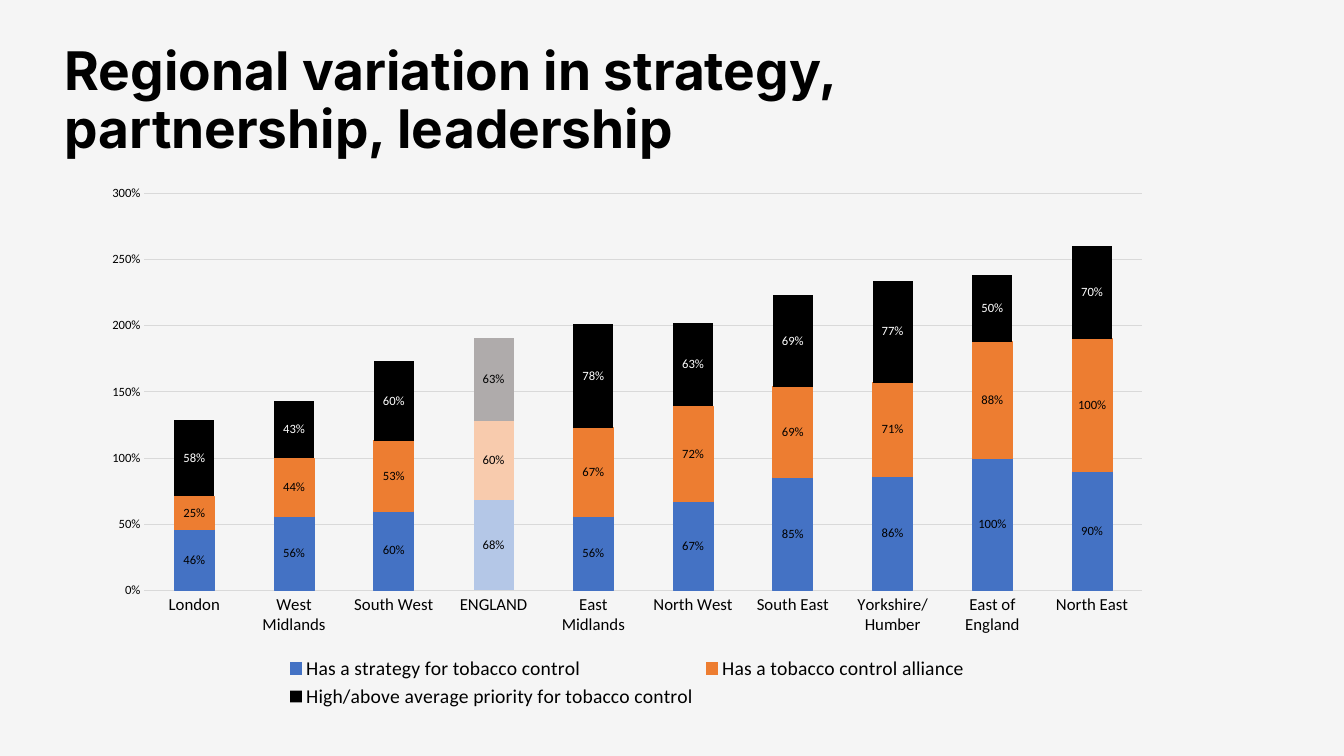
from pptx import Presentation
from pptx.chart.data import CategoryChartData
from pptx.dml.color import RGBColor
from pptx.enum.chart import XL_CHART_TYPE, XL_LABEL_POSITION, XL_LEGEND_POSITION, XL_TICK_MARK
from pptx.enum.text import MSO_ANCHOR, MSO_AUTO_SIZE, PP_ALIGN
from pptx.util import Cm, Pt

STACKED = XL_CHART_TYPE.COLUMN_STACKED
CENTER = XL_LABEL_POSITION.CENTER
BOTTOM = XL_LEGEND_POSITION.BOTTOM
NO_TICK = XL_TICK_MARK.NONE

BLACK = RGBColor(0x00, 0x00, 0x00)
WHITE = RGBColor(0xFF, 0xFF, 0xFF)
PAPER = RGBColor(0xF5, 0xF5, 0xF5)
GRID = RGBColor(0xD9, 0xD9, 0xD9)
BLUE = RGBColor(0x44, 0x72, 0xC4)
PALE_BLUE = RGBColor(0xB4, 0xC7, 0xE7)
ORANGE = RGBColor(0xED, 0x7D, 0x31)
PALE_ORANGE = RGBColor(0xF8, 0xCB, 0xAD)
GREY = RGBColor(0xAF, 0xAB, 0xAB)

TITLE = "Regional variation in strategy, partnership, leadership"
NATIONAL = "ENGLAND"
REGIONS = ["London", "West Midlands", "South West", NATIONAL, "East Midlands",
           "North West", "South East", "Yorkshire/Humber", "East of England", "North East"]
# name, values, bar colour, national bar colour, outline colour, label colour
MEASURES = [
    ("Has a strategy for tobacco control",
     [0.46, 0.56, 0.6, 0.68, 0.56, 0.67, 0.85, 0.86, 1, 0.9],
     BLUE, PALE_BLUE, BLUE, BLACK),
    ("Has a tobacco control alliance",
     [0.25, 0.44, 0.53, 0.6, 0.67, 0.72, 0.69, 0.71, 0.88, 1],
     ORANGE, PALE_ORANGE, ORANGE, BLACK),
    ("High/above average priority for tobacco control",
     [0.58, 0.43, 0.6, 0.63, 0.78, 0.63, 0.69, 0.77, 0.5, 0.7],
     BLACK, GREY, None, WHITE),
]
PERCENT = "0%"


def set_font(font, size, color=BLACK, name="Calibri", bold=False):
    font.name, font.size, font.bold = name, Pt(size), bold
    font.color.rgb = color


def set_line(line, color):
    if color is None:
        line.fill.background()
    else:
        line.color.rgb = color
        line.width = Pt(0.75)


def add_title(page):
    title = page.shapes.title
    title.left, title.top, title.width, title.height = Cm(1.37), Cm(0.74), Cm(22.15), Cm(3.68)
    frame = title.text_frame
    frame.text = TITLE
    frame.word_wrap = True
    frame.auto_size = MSO_AUTO_SIZE.NONE
    frame.vertical_anchor = MSO_ANCHOR.MIDDLE
    para = frame.paragraphs[0]
    para.alignment = PP_ALIGN.LEFT
    para.line_spacing = 0.9
    set_font(para.font, 38, name="Inter", bold=True)


def style_axes(chart):
    regions, shares = chart.category_axis, chart.value_axis
    for axis, size, color in ((regions, 12, GRID), (shares, 9, None)):
        axis.major_tick_mark = axis.minor_tick_mark = NO_TICK
        set_font(axis.tick_labels.font, size)
        set_line(axis.format.line, color)
    shares.minimum_scale, shares.maximum_scale, shares.major_unit = 0, 3, 0.5
    shares.tick_labels.number_format = PERCENT
    shares.tick_labels.number_format_is_linked = False
    set_line(shares.major_gridlines.format.line, GRID)


def style_series(series, color, national_color, outline, label_color):
    series.format.fill.solid()
    series.format.fill.fore_color.rgb = color
    set_line(series.format.line, outline)

    labels = series.data_labels
    labels.show_value = True
    labels.number_format, labels.number_format_is_linked = PERCENT, False
    labels.position = CENTER
    set_font(labels.font, 9, label_color)

    national = series.points[REGIONS.index(NATIONAL)]
    national.format.fill.solid()
    national.format.fill.fore_color.rgb = national_color
    set_line(national.format.line, None)
    if label_color != BLACK:
        set_font(national.data_label.font, 9)
        national.data_label.position = CENTER


def add_region_chart(page):
    data = CategoryChartData(number_format=PERCENT)
    data.categories = REGIONS
    for name, values, *_ in MEASURES:
        data.add_series(name, values)
    chart = page.shapes.add_chart(STACKED, Cm(2.29), Cm(4.42), Cm(27.03), Cm(13.54), data).chart
    chart.has_title = False
    set_font(chart.font, 10)
    chart.has_legend = True
    chart.legend.position = BOTTOM
    chart.legend.include_in_layout = False
    set_font(chart.legend.font, 14)
    style_axes(chart)

    plot = chart.plots[0]
    plot.gap_width, plot.overlap, plot.vary_by_categories = 150, 100, False
    for series, (_, _, *colors) in zip(plot.series, MEASURES):
        style_series(series, *colors)


def main():
    deck = Presentation()
    deck.slide_width, deck.slide_height = Cm(33.87), Cm(19.05)
    page = deck.slides.add_slide(deck.slide_layouts[5])
    page.background.fill.solid()
    page.background.fill.fore_color.rgb = PAPER
    add_title(page)
    add_region_chart(page)
    deck.save("out.pptx")


if __name__ == "__main__":
    main()
